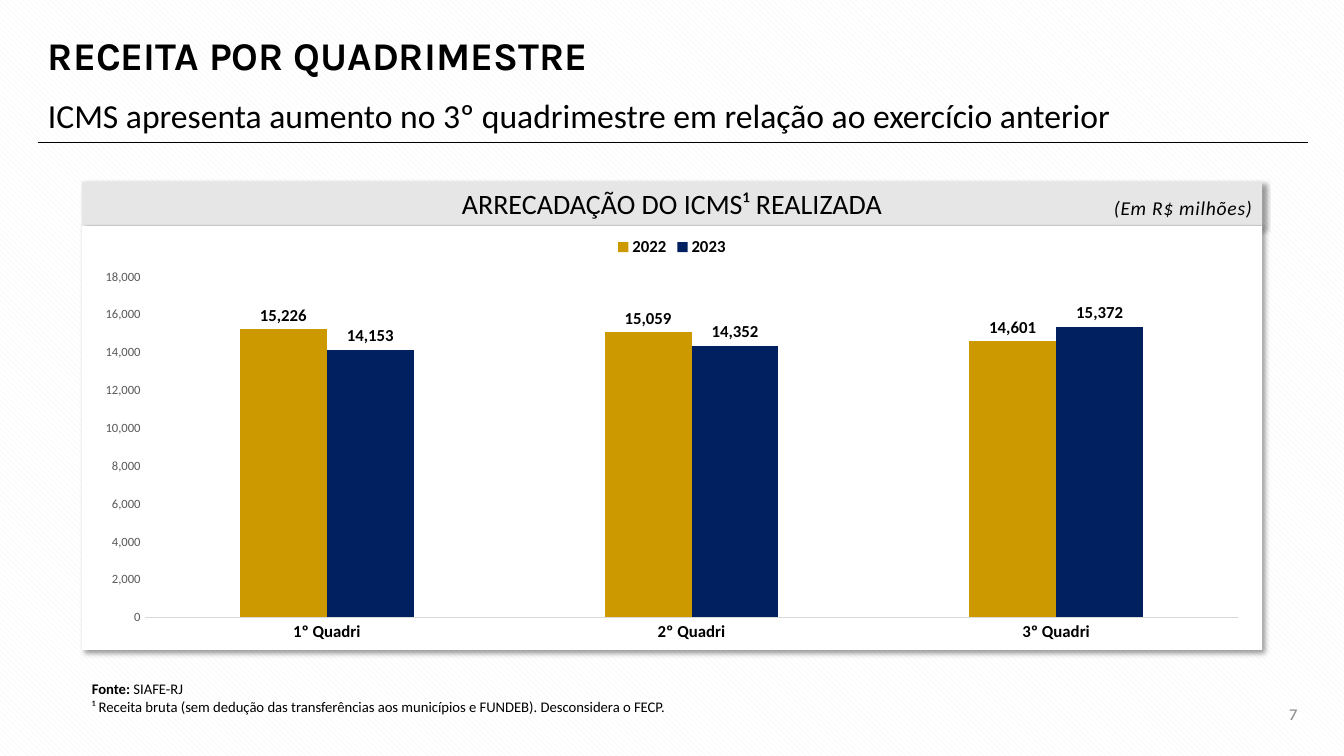
from dataclasses import dataclass

from lxml import etree
from pptx import Presentation
from pptx import util as u
from pptx.chart import data as chart_data
from pptx.dml import color
from pptx.enum import chart as charts
from pptx.enum import dml, shapes, text
from pptx.oxml import ns, parse_xml

PX = 9525
MILLION = 1_000_000
PANEL_LEFT, PANEL_WIDTH = 78, 1124
CHART_TOP, CHART_HEIGHT = 215, 404

QUARTERS = ["1º Quadri", "2º Quadri", "3º Quadri"]
REVENUE = {"2022": [15226, 15059, 14601], "2023": [14153, 14352, 15372]}


@dataclass(frozen=True)
class Theme:
    heading_font: str = "Karla"
    body_font: str = "Calibri"
    black: str = "000000"
    white: str = "FFFFFF"
    band: str = "E7E6E6"
    hatch: str = "F2F2F2"
    page_grey: str = "8C8C8C"
    axis_text: str = "595959"
    axis_line: str = "D9D9D9"
    series: tuple = ("CC9900", "002060")
    title: float = 28
    subtitle: float = 24
    panel_title: float = 20
    unit: float = 14
    label: float = 12
    chart: float = 10
    note: float = 10.5
    axis: float = 9
    number_format: str = "#,##0,,"


THEME = Theme()


def px(*lengths):
    return [u.Emu(length * PX) for length in lengths]


def rgb(value):
    return color.RGBColor.from_string(value)


def style_font(font, size, ink=THEME.black, name=THEME.body_font, bold=False, italic=False):
    font.size = u.Pt(size)
    font.name = name
    font.bold = bold
    font.italic = italic
    font.color.rgb = rgb(ink)


def write(shape, words, size, align=text.PP_ALIGN.LEFT, anchor=text.MSO_ANCHOR.TOP,
          line_spacing=None, **font_style):
    frame = shape.text_frame
    frame.text = words
    frame.word_wrap = True
    frame.auto_size = text.MSO_AUTO_SIZE.NONE
    frame.vertical_anchor = anchor
    for paragraph in frame.paragraphs:
        paragraph.alignment = align
        paragraph.line_spacing = line_spacing
        for run in paragraph.runs:
            style_font(run.font, size, **font_style)


def fill_placeholder(placeholder, box, words, size, **text_style):
    placeholder.left, placeholder.top, placeholder.width, placeholder.height = px(*box)
    write(placeholder, words, size, anchor=text.MSO_ANCHOR.MIDDLE, **text_style)
    for paragraph in placeholder.text_frame.paragraphs:
        paragraph.space_before = u.Pt(0)
        properties = paragraph._p.get_or_add_pPr()
        properties.set("marL", "0")
        properties.set("indent", "0")
        etree.SubElement(properties, ns.qn("a:buNone"))


def add_text(slide, box, words, size, **text_style):
    shape = slide.shapes.add_textbox(*px(*box))
    write(shape, words, size, **text_style)
    return shape


def add_panel(slide, box, fill):
    shape = slide.shapes.add_shape(shapes.MSO_SHAPE.RECTANGLE, *px(*box))
    shape.fill.solid()
    shape.fill.fore_color.rgb = rgb(fill)
    shape.line.fill.background()
    shape._element.spPr.append(parse_xml(
        f'<a:effectLst {ns.nsdecls("a")}>'
        f'<a:outerShdw blurRad="{u.Pt(4)}" dist="{u.Pt(3)}" dir="2700000" '
        'algn="tl" rotWithShape="0">'
        f'<a:srgbClr val="{THEME.black}"><a:alpha val="40000"/></a:srgbClr>'
        '</a:outerShdw></a:effectLst>'))
    return shape


def add_rule(slide, left, right, y):
    line = slide.shapes.add_connector(
        shapes.MSO_CONNECTOR.STRAIGHT, *px(left, y, right, y))
    line.line.color.rgb = rgb(THEME.black)
    line.line.width = u.Pt(0.5)
    etree.SubElement(line._element.spPr, ns.qn("a:effectLst"))


def style_axes(chart):
    categories, values = chart.category_axis, chart.value_axis
    for axis in (categories, values):
        axis.has_major_gridlines = False
        axis.major_tick_mark = axis.minor_tick_mark = charts.XL_TICK_MARK.NONE
    style_font(categories.tick_labels.font, THEME.label, bold=True)
    categories.format.line.color.rgb = rgb(THEME.axis_line)
    categories.format.line.width = u.Pt(0.75)
    style_font(values.tick_labels.font, THEME.axis, ink=THEME.axis_text)
    values.format.line.fill.background()
    values.minimum_scale = 0
    values.maximum_scale = 18000 * MILLION
    values.major_unit = 2000 * MILLION
    values.tick_labels.number_format = THEME.number_format
    values.tick_labels.number_format_is_linked = False


def style_series(series, fill):
    series.format.fill.solid()
    series.format.fill.fore_color.rgb = rgb(fill)
    series.invert_if_negative = False
    labels = series.data_labels
    labels.show_value = True
    labels.position = charts.XL_LABEL_POSITION.OUTSIDE_END
    labels.number_format = THEME.number_format
    labels.number_format_is_linked = False
    style_font(labels.font, THEME.label, bold=True)


def add_revenue_chart(slide, box):
    figures = chart_data.CategoryChartData(number_format=THEME.number_format)
    figures.categories = QUARTERS
    for year, amounts in REVENUE.items():
        figures.add_series(year, [amount * MILLION for amount in amounts])
    chart = slide.shapes.add_chart(
        charts.XL_CHART_TYPE.COLUMN_CLUSTERED, *px(*box), figures).chart
    style_font(chart.font, THEME.chart)
    chart.has_title = False
    chart.has_legend = True
    chart.legend.position = charts.XL_LEGEND_POSITION.TOP
    chart.legend.include_in_layout = False
    style_font(chart.legend.font, THEME.label, bold=True)
    style_axes(chart)
    plot = chart.plots[0]
    plot.vary_by_categories = False
    plot.gap_width = 219
    plot.overlap = 0
    for series, fill in zip(plot.series, THEME.series):
        style_series(series, fill)


def add_source_note(slide, box):
    note = add_text(
        slide, box,
        "Fonte: \n¹ Receita bruta (sem dedução das transferências aos municípios e FUNDEB). "
        "Desconsidera o FECP.", THEME.note)
    source = note.text_frame.paragraphs[0]
    source.runs[0].font.bold = True
    system = source.add_run()
    system.text = "SIAFE-RJ"
    style_font(system.font, THEME.note)


def set_background(slide):
    fill = slide.background.fill
    fill.patterned()
    fill.pattern = dml.MSO_PATTERN.WIDE_DOWNWARD_DIAGONAL
    fill.fore_color.rgb = rgb(THEME.hatch)
    fill.back_color.rgb = rgb(THEME.white)


def main():
    presentation = Presentation()
    presentation.slide_width, presentation.slide_height = px(1280, 720)
    slide = presentation.slides.add_slide(presentation.slide_layouts[1])
    set_background(slide)

    fill_placeholder(slide.shapes.title, (36, 17, 853, 76), "RECEITA POR QUADRIMESTRE",
                     THEME.title, line_spacing=0.9, name=THEME.heading_font, bold=True)
    fill_placeholder(slide.placeholders[1], (36, 77, 1210, 57),
                     "ICMS apresenta aumento no 3º quadrimestre em relação ao exercício anterior",
                     THEME.subtitle, line_spacing=1.2)
    add_rule(slide, 36, 1246, 136)

    header = add_panel(slide, (PANEL_LEFT, 173, PANEL_WIDTH, 42), THEME.band)
    write(header, "ARRECADAÇÃO DO ICMS¹ REALIZADA", THEME.panel_title,
          align=text.PP_ALIGN.CENTER)
    chart_box = (PANEL_LEFT, CHART_TOP, PANEL_WIDTH, CHART_HEIGHT)
    add_panel(slide, chart_box, THEME.white)
    unit = add_text(slide, (1023, 177, 179, 38), "(Em R$ milhões)", THEME.unit,
                    align=text.PP_ALIGN.RIGHT, line_spacing=1.2, italic=True)
    unit.text_frame.paragraphs[0].runs[0].font._element.set("spc", "50")
    add_revenue_chart(slide, chart_box)

    add_source_note(slide, (PANEL_LEFT, 643, 1153, 43))
    add_text(slide, (1153, 661, 92, 38), "7", THEME.label, align=text.PP_ALIGN.RIGHT,
             anchor=text.MSO_ANCHOR.MIDDLE, name=THEME.heading_font, ink=THEME.page_grey)
    presentation.save("out.pptx")


if __name__ == "__main__":
    main()
